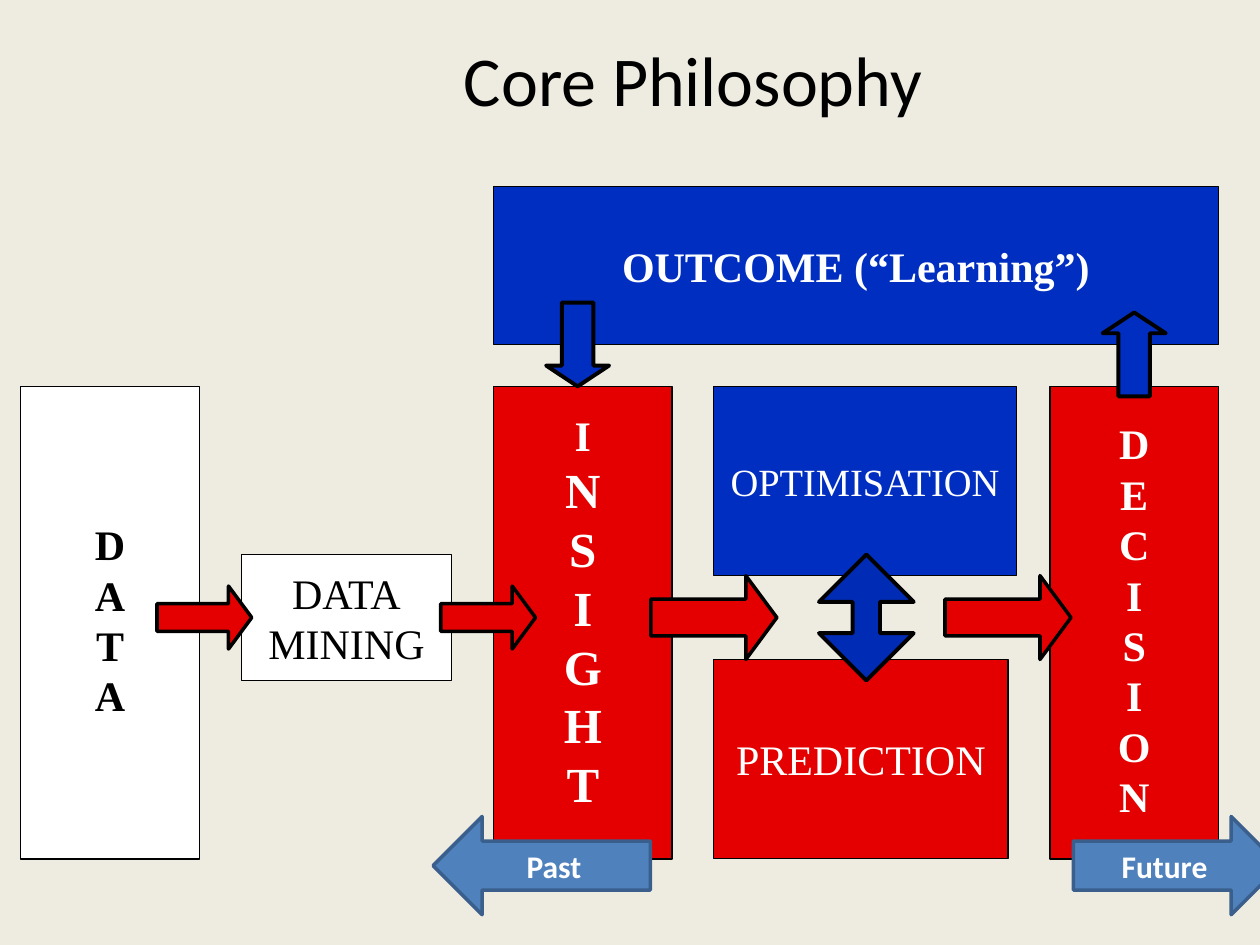
from pptx import Presentation
from pptx.dml.color import RGBColor
from pptx.enum.shapes import MSO_SHAPE as Kind
from pptx.enum.text import MSO_ANCHOR as Anchor, PP_ALIGN as Align
from pptx.util import Cm, Pt


class Theme:
    paper, black, white = "EEECE1", "000000", "FFFFFF"
    red, blue, deep_blue = "E40000", "002EC0", "002BB4"
    time_fill, time_line = "4F81BD", "3A5F8C"
    serif, sans = "Times New Roman", "Calibri"
    title, large, normal, small, label = 40, 28, 24, 22, 18
    leading = 1.2
    thin, medium, thick = 0.75, 2, 2.25


# Shared rows and sizes, in centimetres
COLUMN_TOP, COLUMN_HEIGHT = 7.79, 9.53
FLOW_MIDDLE = 12.45
TIME_TOP, TIME_HEIGHT = 16.46, 1.98

# Tall columns: word, left, width, fill, text colour, size, space above in points
COLUMNS = [
    ("INSIGHT", 9.95, 3.6, Theme.red, Theme.white, Theme.large, 13.2),
    ("DECISION", 21.17, 3.39, Theme.red, Theme.white, Theme.normal, 18),
    ("DATA", 0.42, 3.6, Theme.white, Theme.black, Theme.normal, 75.6),
]

# Boxes: text, (left, top, width, height), fill, text colour, size, bold
MINING = ("DATA\nMINING", (4.87, 11.18, 4.23, 2.54), Theme.white, Theme.black, Theme.normal, False)
MODELS = [
    ("OPTIMISATION", (14.39, 7.79, 6.1, 3.81), Theme.blue, Theme.white, Theme.small, False),
    ("PREDICTION", (14.39, 13.29, 5.93, 4.02), Theme.red, Theme.white, Theme.normal, False),
]
OUTCOME = ("OUTCOME (“Learning”)", (9.95, 3.76, 14.61, 3.18), Theme.blue, Theme.white, Theme.normal, True)

# Red flow arrows: centre, thickness, length
DATA_FLOW = (4.12, 1.27, 1.91)
MODEL_FLOWS = [(14.39, 1.69, 2.54), (20.32, 1.69, 2.54)]
INSIGHT_FLOW = (9.84, 1.27, 1.91)

# Blue arrows: kind, (left, top, width, height), fill, adjustments
EXCHANGE = (Kind.UP_DOWN_ARROW, (16.51, 11.18, 1.91, 2.54), Theme.deep_blue, (0.44, 0.29))
LEARNING = [
    (Kind.UP_ARROW, (22.23, 6.3, 1.27, 1.69), Theme.blue, (0.5, 0.33)),
    (Kind.DOWN_ARROW, (11.01, 6.1, 1.27, 1.69), Theme.blue, (0.5, 0.33)),
]

# Time arrows: text, kind, left, width
TIMES = [
    ("Past", Kind.LEFT_ARROW, 8.73, 4.38),
    ("Future", Kind.RIGHT_ARROW, 21.64, 4.17),
]


def add_shape(kind, place, fill, line=Theme.black, weight=Theme.thin, adjustments=()):
    shape = page.shapes.add_shape(kind, *(Cm(value) for value in place))
    shape.shadow.inherit = False
    shape.fill.solid()
    shape.fill.fore_color.rgb = RGBColor.from_string(fill)
    shape.line.color.rgb = RGBColor.from_string(line)
    shape.line.width = Pt(weight)
    for index, value in enumerate(adjustments):
        shape.adjustments[index] = value
    return shape


def write(shape, text, size, color, font=Theme.serif, bold=False, anchor=Anchor.MIDDLE):
    frame = shape.text_frame
    frame.text = text
    frame.word_wrap = True
    frame.vertical_anchor = anchor
    for para in frame.paragraphs:
        para.alignment = Align.CENTER
        for span in para.runs:
            span.font.name, span.font.size, span.font.bold = font, Pt(size), bold
            span.font.color.rgb = RGBColor.from_string(color)
    return frame


def lead(frame, size):
    for para in frame.paragraphs:
        para.line_spacing = Pt(size * Theme.leading)


def add_column(word, left, width, fill, color, size, space):
    box = add_shape(Kind.RECTANGLE, (left, COLUMN_TOP, width, COLUMN_HEIGHT), fill)
    frame = write(box, "\n".join(word), size, color, bold=True, anchor=Anchor.TOP)
    frame.margin_top = Pt(space)
    lead(frame, size)
    return frame


def add_box(text, place, fill, color, size, bold):
    frame = write(add_shape(Kind.RECTANGLE, place, fill), text, size, color, bold=bold)
    if "\n" in text:
        lead(frame, size)


def add_flow(center, thickness, length):
    place = (center - thickness / 2, FLOW_MIDDLE - length / 2, thickness, length)
    arrow = add_shape(Kind.UP_ARROW, place, Theme.red,
                      weight=Theme.medium, adjustments=(0.44, 0.37))
    arrow.rotation = 90


def add_blue_arrow(kind, place, fill, adjustments):
    add_shape(kind, place, fill, weight=Theme.thick, adjustments=adjustments)


deck = Presentation()
deck.slide_width, deck.slide_height = Cm(25.4), Cm(19.05)
page = deck.slides.add_slide(deck.slide_layouts[5])
page.background.fill.solid()
page.background.fill.fore_color.rgb = RGBColor.from_string(Theme.paper)

# Title
title = page.shapes.title
title.left, title.top, title.width, title.height = Cm(2.54), Cm(0), Cm(22.86), Cm(3.18)
write(title, "Core Philosophy", Theme.title, Theme.black, Theme.sans)

# Columns; the first letter of INSIGHT is smaller
frames = [add_column(*column) for column in COLUMNS]
first_letter = frames[0].paragraphs[0]
first_letter.runs[0].font.size = Pt(Theme.normal)
first_letter.line_spacing = Pt(Theme.normal * Theme.leading)

# Data mining
add_box(*MINING)
add_flow(*DATA_FLOW)

# Optimisation and prediction
for model in MODELS:
    add_box(*model)
for flow in MODEL_FLOWS:
    add_flow(*flow)
add_blue_arrow(*EXCHANGE)

# Learning loop
add_box(*OUTCOME)
for arrow in LEARNING:
    add_blue_arrow(*arrow)
add_flow(*INSIGHT_FLOW)

# Past and future
for text, kind, left, width in TIMES:
    arrow = add_shape(kind, (left, TIME_TOP, width, TIME_HEIGHT),
                      Theme.time_fill, Theme.time_line, Theme.medium)
    write(arrow, text, Theme.label, Theme.white, Theme.sans, bold=True)

deck.save("out.pptx")
